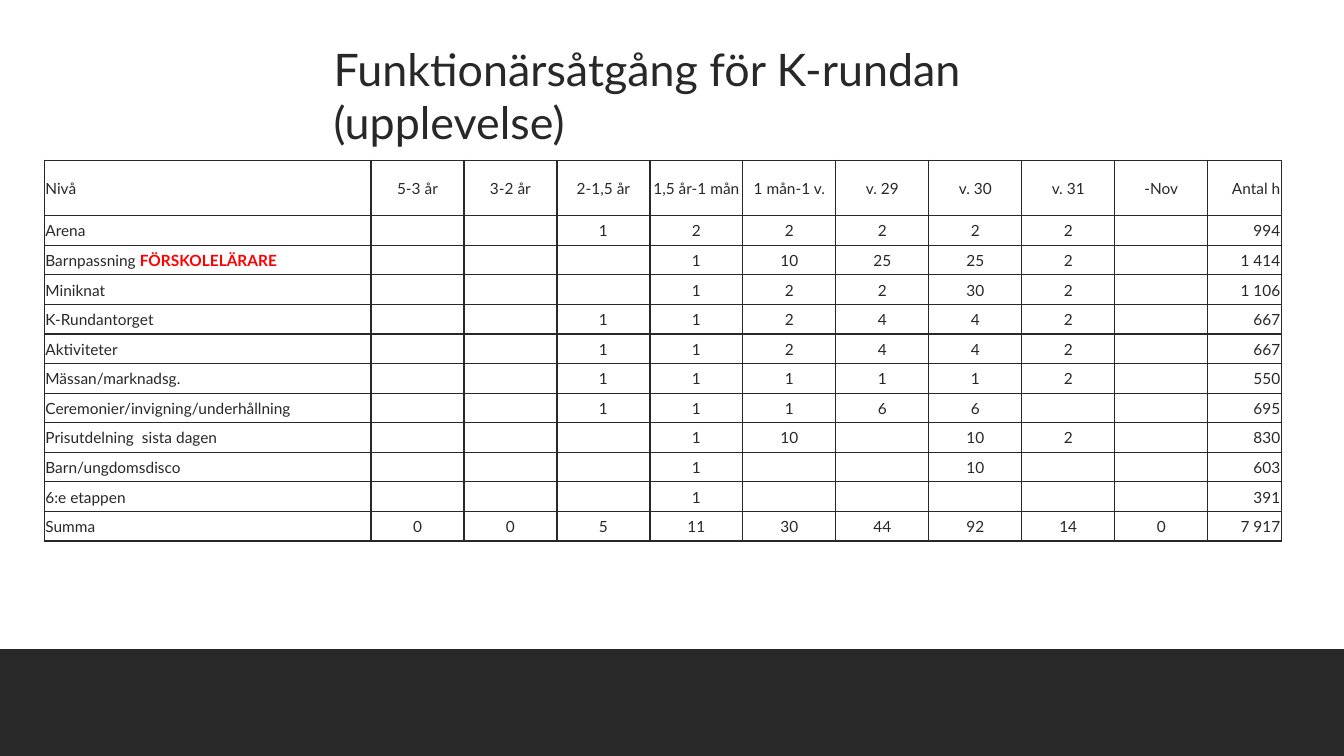
from dataclasses import dataclass

from lxml.etree import SubElement
from pptx import Presentation
from pptx.dml.color import RGBColor
from pptx.enum.shapes import MSO_SHAPE
from pptx.enum.text import MSO_ANCHOR, MSO_AUTO_SIZE, PP_ALIGN
from pptx.oxml import parse_xml
from pptx.oxml.ns import nsdecls, qn
from pptx.util import Inches, Pt


@dataclass(frozen=True)
class Theme:
    """Colours, font and type sizes of the slide."""
    dark: str = "282828"
    paper: str = "FFFFFF"
    accent: str = "FF0000"
    font: str = "Lato"
    title_size: int = 32
    cell_size: int = 11
    border: float = 1


THEME = Theme()
WIDTH, HEIGHT = Inches(13.33), Inches(7.5)
TITLE = "Funktionärsåtgång för K-rundan (upplevelse)"
ACCENT_WORD = "FÖRSKOLELÄRARE"
HEADER = ["Nivå", "5-3 år", "3-2 år", "2-1,5 år", "1,5 år-1 mån", "1 mån-1 v.",
          "v. 29", "v. 30", "v. 31", "-Nov", "Antal h"]
STAFFING = [
    ["Arena", "", "", 1, 2, 2, 2, 2, 2, "", "994"],
    ["Barnpassning " + ACCENT_WORD, "", "", "", 1, 10, 25, 25, 2, "", "1 414"],
    ["Miniknat", "", "", "", 1, 2, 2, 30, 2, "", "1 106"],
    ["K-Rundantorget", "", "", 1, 1, 2, 4, 4, 2, "", "667"],
    ["Aktiviteter", "", "", 1, 1, 2, 4, 4, 2, "", "667"],
    ["Mässan/marknadsg.", "", "", 1, 1, 1, 1, 1, 2, "", "550"],
    ["Ceremonier/invigning/underhållning", "", "", 1, 1, 1, 6, 6, "", "", "695"],
    ["Prisutdelning  sista dagen", "", "", "", 1, 10, "", 10, 2, "", "830"],
    ["Barn/ungdomsdisco", "", "", "", 1, "", "", 10, "", "", "603"],
    ["6:e etappen", "", "", "", 1, "", "", "", "", "", "391"],
    ["Summa", 0, 0, 5, 11, 30, 44, 92, 14, 0, "7 917"],
]


def style_run(r, size, color=THEME.dark, bold=False):
    """Give a run its font, size, colour and weight."""
    r.font.name, r.font.size, r.font.bold = THEME.font, Pt(size), bold
    r.font.color.rgb = RGBColor.from_string(color)


def add_band(s, top):
    """Draw the dark band from the given top to the foot of the slide."""
    sp = s.shapes.add_shape(MSO_SHAPE.RECTANGLE, 0, top, WIDTH, HEIGHT - top)
    sp.shadow.inherit = False
    sp.fill.solid()
    sp.fill.fore_color.rgb = RGBColor.from_string(THEME.dark)
    sp.line.fill.background()


def set_title(s, left, top, width, height):
    """Place and format the title placeholder."""
    sp = s.shapes.title
    sp.left, sp.top, sp.width, sp.height = left, top, width, height
    tf = sp.text_frame
    tf.text = TITLE
    tf.margin_left = tf.margin_right = tf.margin_top = tf.margin_bottom = 0
    tf.word_wrap = True
    tf.auto_size = MSO_AUTO_SIZE.SHAPE_TO_FIT_TEXT
    tf.vertical_anchor = MSO_ANCHOR.TOP
    p = tf.paragraphs[0]
    p.alignment = PP_ALIGN.LEFT
    style_run(p.runs[0], THEME.title_size)


def add_borders(cell):
    """Line all four sides of a cell."""
    tc_pr = cell._tc.get_or_add_tcPr()
    for i, side in enumerate("LRTB"):
        tc_pr.insert(i, parse_xml(
            f'<a:ln{side} {nsdecls("a")} w="{Pt(THEME.border)}"><a:solidFill>'
            f'<a:srgbClr val="{THEME.dark}"/></a:solidFill></a:ln{side}>'))


def fill_cell(cell, text, alignment):
    """Write and format one table cell."""
    cell.fill.solid()
    cell.fill.fore_color.rgb = RGBColor.from_string(THEME.paper)
    cell.margin_left = cell.margin_right = cell.margin_top = Inches(0.01)
    cell.margin_bottom = 0
    cell.vertical_anchor = MSO_ANCHOR.MIDDLE
    add_borders(cell)
    p = cell.text_frame.paragraphs[0]
    p.alignment = alignment
    plain, accent, _ = text.partition(ACCENT_WORD)
    if plain:
        p.text = plain
        style_run(p.runs[0], THEME.cell_size)
    else:
        SubElement(p._p, qn("a:endParaRPr"), sz=str(THEME.cell_size * 100))
    if accent:
        r = p.add_run()
        r.text = accent
        style_run(r, THEME.cell_size, THEME.accent, True)


def add_staffing_table(s, left, top, width, height):
    """Add the staffing table with wide first and narrow last columns."""
    rows = [HEADER] + STAFFING
    periods = len(HEADER) - 2
    table = s.shapes.add_table(len(rows), len(HEADER), left, top, width, height).table
    table.first_row = table.horz_banding = False
    name_w, total_w, header_h = Inches(3.24), Inches(0.73), Inches(0.55)
    period_w = (width - name_w - total_w) // periods
    row_h = (height - header_h) // len(STAFFING)
    for column, w in zip(table.columns, [name_w] + [period_w] * periods + [total_w]):
        column.width = w
    for row, h in zip(table.rows, [header_h] + [row_h] * len(STAFFING)):
        row.height = h
    alignments = [PP_ALIGN.LEFT] + [PP_ALIGN.CENTER] * periods + [PP_ALIGN.RIGHT]
    for i, values in enumerate(rows):
        for j, (value, alignment) in enumerate(zip(values, alignments)):
            fill_cell(table.cell(i, j), str(value), alignment)


def main():
    """Build the slide and save it."""
    prs = Presentation()
    prs.slide_width, prs.slide_height = WIDTH, HEIGHT
    s = prs.slides.add_slide(prs.slide_layouts[5])
    s.background.fill.solid()
    s.background.fill.fore_color.rgb = RGBColor.from_string(THEME.paper)
    add_band(s, Inches(6.44))
    set_title(s, Inches(3.31), Inches(0.41), Inches(8.2), Inches(0.54))
    add_staffing_table(s, Inches(0.44), Inches(1.59), Inches(12.27), Inches(3.78))
    prs.save("out.pptx")


if __name__ == "__main__":
    main()
